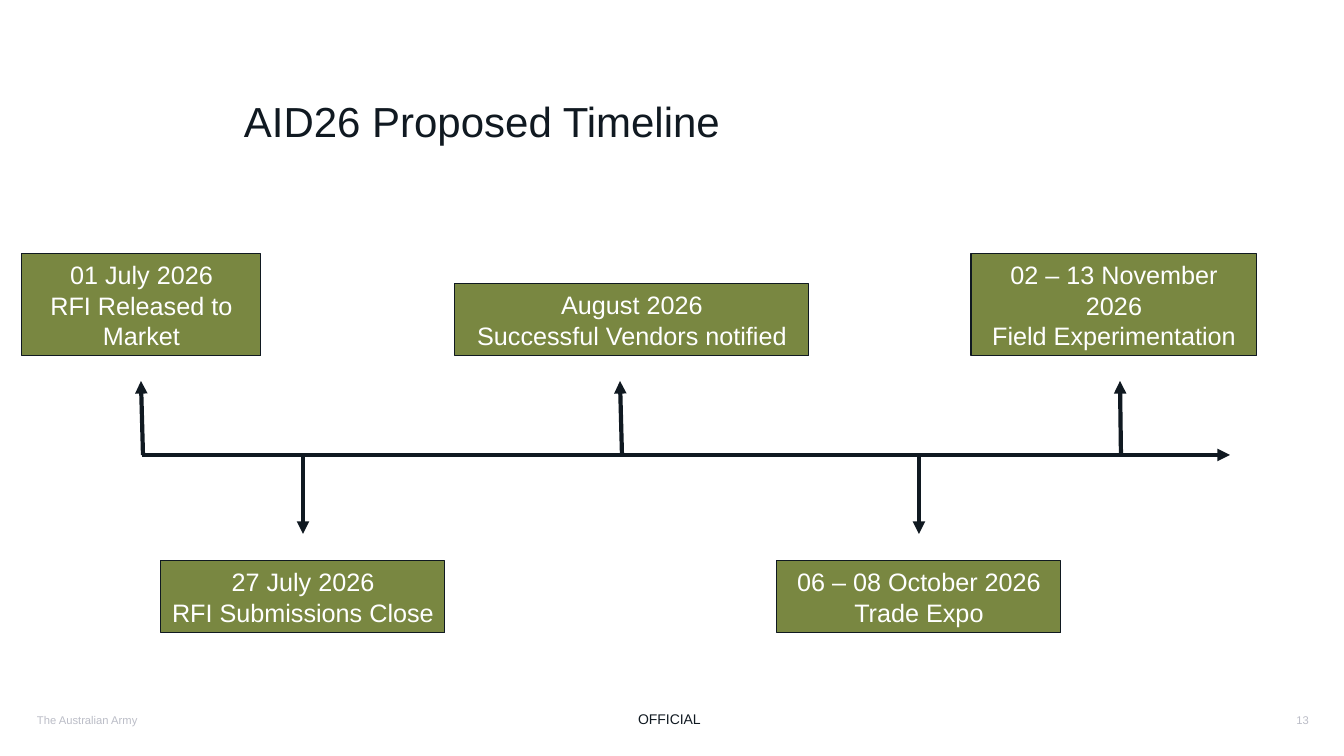
import pptx
import pptx.util
import pptx.dml.color
import pptx.enum.shapes
import pptx.enum.text
import pptx.oxml.ns
from dataclasses import dataclass
from lxml import etree

TITLE = "AID26 Proposed Timeline"
MILESTONES = [
    {"lines": ["01 July 2026", "RFI Released to Market"],
     "left": 22, "width": 239, "height": 102, "start": 143, "tip": 141, "above": True},
    {"lines": ["27 July 2026", "RFI Submissions Close"],
     "left": 161, "width": 284, "height": 72, "start": 303, "tip": 303, "above": False},
    {"lines": ["August 2026", "Successful Vendors notified"],
     "left": 455, "width": 354, "height": 72, "start": 622, "tip": 620, "above": True},
    {"lines": ["06 – 08 October 2026", "Trade Expo"],
     "left": 777, "width": 284, "height": 72, "start": 919, "tip": 919, "above": False},
    {"lines": ["02 – 13 November 2026", "Field Experimentation"],
     "left": 971, "width": 286, "height": 102, "start": 1121, "tip": 1120, "above": True},
]
AXIS = {"left": 142, "right": 1230, "y": 455}
ABOVE = {"box_edge": 356, "tip": 381}
BELOW = {"box_edge": 561, "tip": 534}

ALIGN = pptx.enum.text.PP_ALIGN
ANCHOR = pptx.enum.text.MSO_ANCHOR


@dataclass(frozen=True)
class Theme:
    font: str = "Arial"
    ink: str = "101921"
    olive: str = "798741"
    white: str = "FFFFFF"
    grey: str = "BBBDC7"
    title_size: int = 30
    label_size: int = 18
    marking_size: int = 10
    footer_size: int = 8
    arrow_width: float = 3
    border_width: float = 0.75


THEME = Theme()
FOOTERS = [
    {"text": "OFFICIAL", "frame": (628, 706, 88, 27), "size": THEME.marking_size,
     "color": THEME.ink, "margins": (10, 5), "anchor": ANCHOR.TOP, "wrap": False},
    {"text": "The Australian Army", "frame": (37, 708, 245, 24),
     "size": THEME.footer_size, "color": THEME.grey},
    {"text": "13", "frame": (1289, 709, 20, 22), "size": THEME.footer_size,
     "color": THEME.grey, "align": ALIGN.RIGHT},
]


def px(length):
    return round(length * 914400 / 100.8)


def rgb(color):
    return pptx.dml.color.RGBColor.from_string(color)


def write(shape, lines, size, color, align=ALIGN.LEFT, anchor=ANCHOR.MIDDLE,
          margins=(0, 0), wrap=True, spacing=None):
    frame = shape.text_frame
    frame.auto_size = pptx.enum.text.MSO_AUTO_SIZE.NONE
    frame.word_wrap = wrap
    frame.vertical_anchor = anchor
    frame.margin_left = frame.margin_right = px(margins[0])
    frame.margin_top = frame.margin_bottom = px(margins[1])
    frame.text = "\n".join(lines)
    for paragraph in frame.paragraphs:
        paragraph.alignment = align
        if spacing:
            paragraph.line_spacing = spacing
        paragraph.font.name = THEME.font
        paragraph.font.size = pptx.util.Pt(size)
        paragraph.font.color.rgb = rgb(color)


def add_arrow(slide, *ends):
    connector = slide.shapes.add_connector(
        pptx.enum.shapes.MSO_CONNECTOR.STRAIGHT, *map(px, ends))
    connector.line.color.rgb = rgb(THEME.ink)
    connector.line.width = pptx.util.Pt(THEME.arrow_width)
    qualified = pptx.oxml.ns.qn
    line = connector.line._get_or_add_ln()
    etree.SubElement(line, qualified("a:tailEnd"), type="triangle")
    etree.SubElement(connector._element.spPr, qualified("a:effectLst"))


def add_milestone(slide, milestone):
    above = milestone["above"]
    side = ABOVE if above else BELOW
    top = side["box_edge"] - (milestone["height"] if above else 0)
    frame = (milestone["left"], top, milestone["width"], milestone["height"])
    box = slide.shapes.add_shape(
        pptx.enum.shapes.MSO_SHAPE.RECTANGLE, *map(px, frame))
    box.shadow.inherit = False
    box.fill.solid()
    box.fill.fore_color.rgb = rgb(THEME.olive)
    box.line.color.rgb = rgb(THEME.ink)
    box.line.width = pptx.util.Pt(THEME.border_width)
    write(box, milestone["lines"], size=THEME.label_size, color=THEME.white,
          align=ALIGN.CENTER, margins=(10, 5))
    add_arrow(slide, milestone["start"], AXIS["y"], milestone["tip"], side["tip"])


def add_footer(slide, text, frame, **style):
    write(slide.shapes.add_textbox(*map(px, frame)), [text], **style)


def main():
    presentation = pptx.Presentation()
    presentation.slide_width = px(1344)
    presentation.slide_height = px(756)
    slide = presentation.slides.add_slide(presentation.slide_layouts[5])

    title = slide.shapes.title
    title.left, title.top, title.width, title.height = map(px, (244, 93, 596, 54))
    write(title, [TITLE], size=THEME.title_size, color=THEME.ink,
          anchor=ANCHOR.BOTTOM, spacing=0.9)

    for footer in FOOTERS:
        add_footer(slide, **footer)
    add_arrow(slide, AXIS["left"], AXIS["y"], AXIS["right"], AXIS["y"])
    for milestone in MILESTONES:
        add_milestone(slide, milestone)

    presentation.save("out.pptx")


if __name__ == "__main__":
    main()
